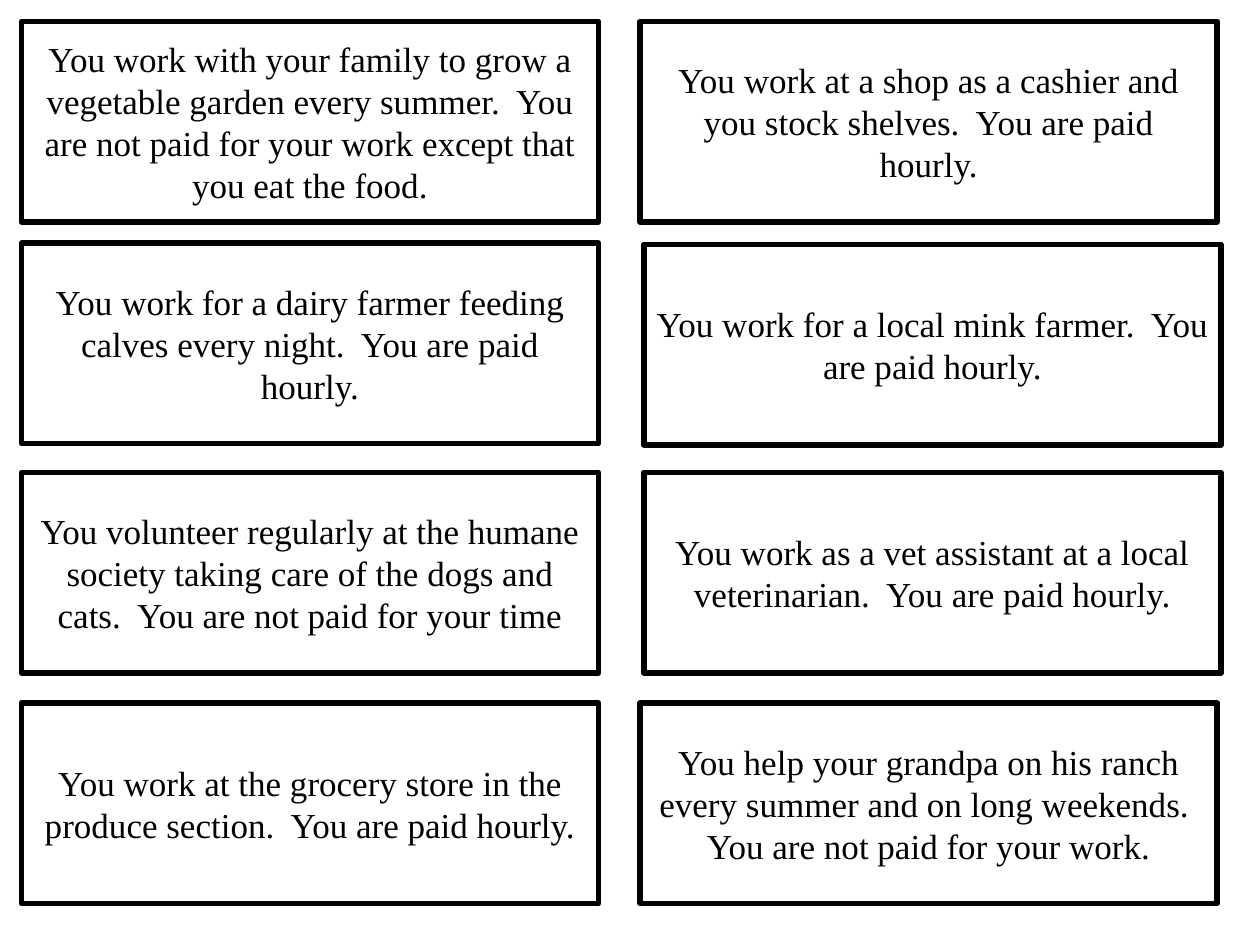
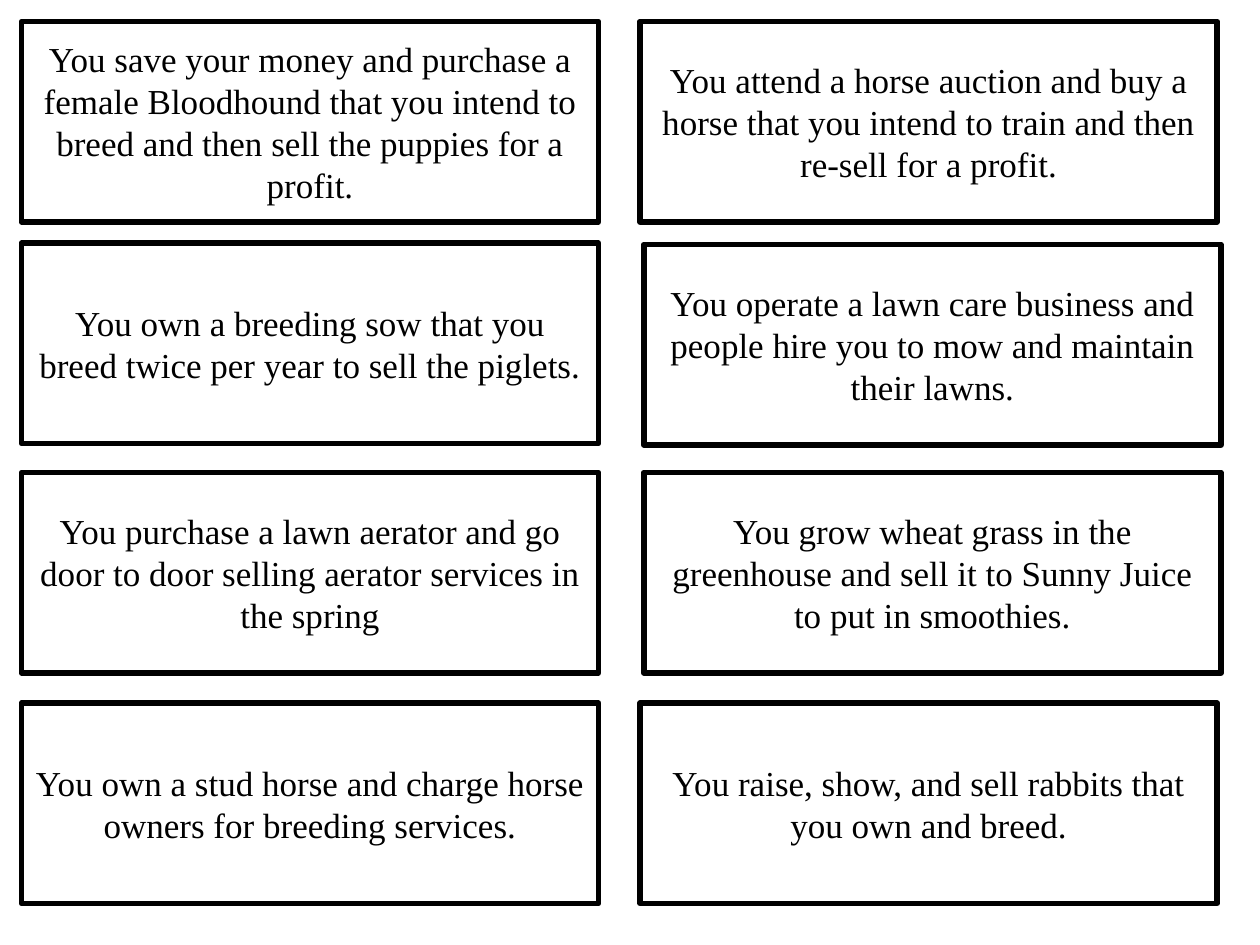
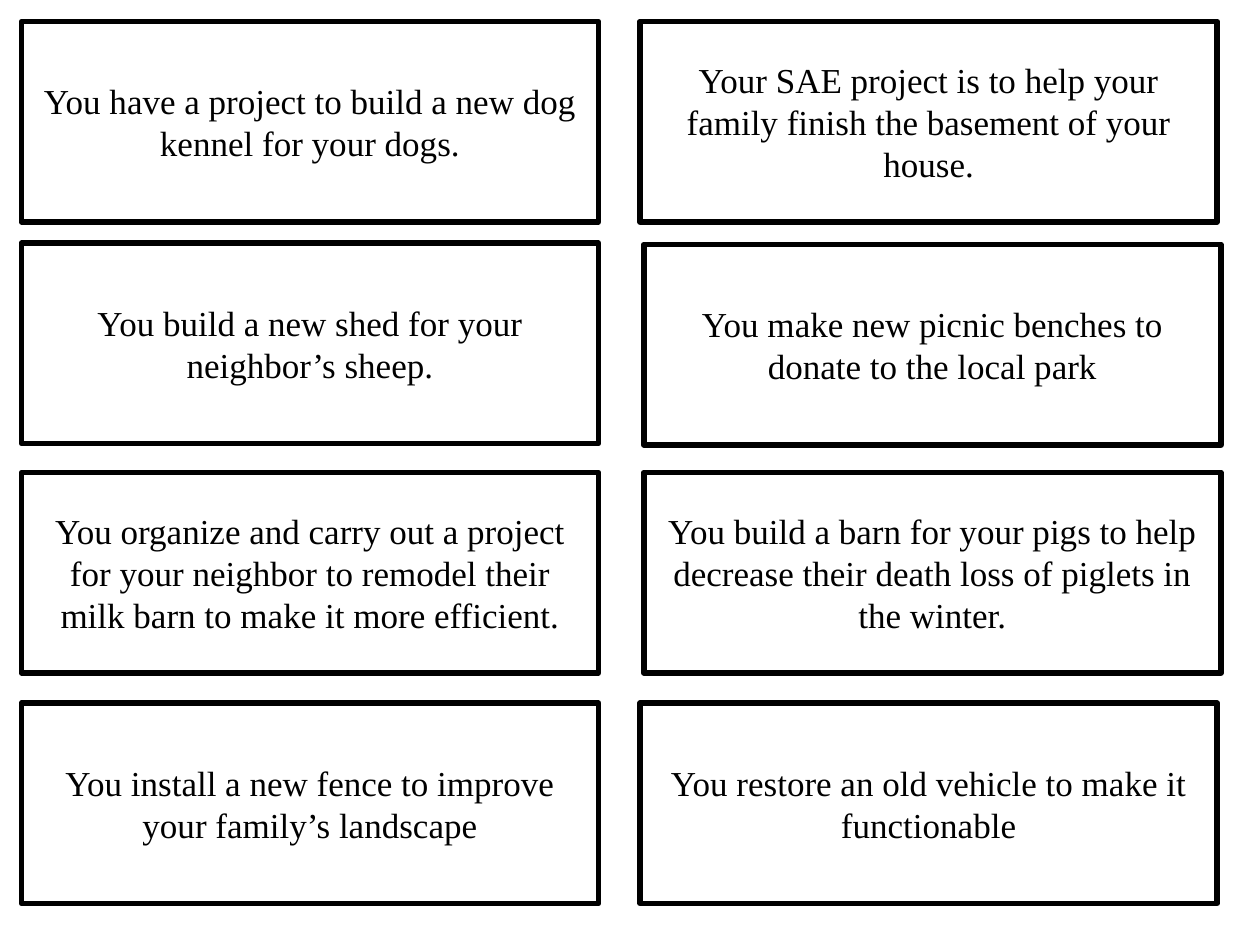
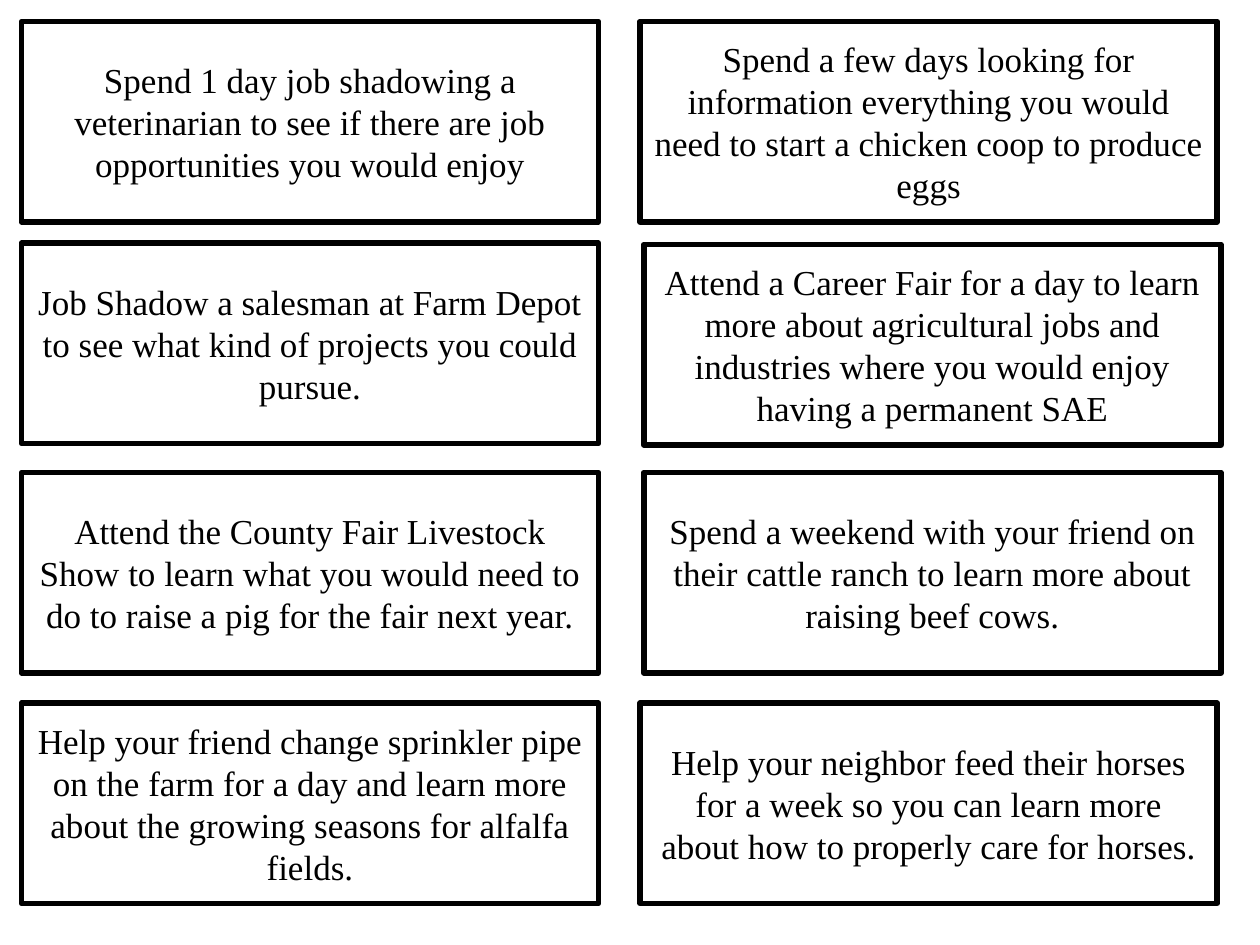
from pptx import Presentation
from pptx.dml.color import RGBColor
from pptx.enum import shapes, text
from pptx.util import Inches, Pt

BLACK = RGBColor(0x00, 0x00, 0x00)
CARD_WIDTH, CARD_HEIGHT = Inches(4.58), Inches(1.59)
CARD_SPOTS = [
    (0.17, 0.17), (5.08, 0.17),
    (0.17, 1.93), (5.11, 1.94),
    (0.17, 3.75), (5.11, 3.75),
    (0.17, 5.58), (5.08, 5.58),
]
CARD_FRAME = {"word_wrap": True, "vertical_anchor": text.MSO_ANCHOR.MIDDLE}
CARD_FONT = {"name": "Times New Roman", "size": Pt(20)}

PLACEMENT = [
    "You work with your family to grow a vegetable garden every summer.  You are not paid for your work except that you eat the food.",
    "You work at a shop as a cashier and you stock shelves.  You are paid hourly.",
    "You work for a dairy farmer feeding calves every night.  You are paid hourly.",
    "You work for a local mink farmer.  You are paid hourly.",
    "You volunteer regularly at the humane society taking care of the dogs and cats.  You are not paid for your time",
    "You work as a vet assistant at a local veterinarian.  You are paid hourly.",
    "You work at the grocery store in the produce section.  You are paid hourly.",
    "You help your grandpa on his ranch every summer and on long weekends.  You are not paid for your work.",
]
ENTREPRENEURSHIP = [
    "You save your money and purchase a female Bloodhound that you intend to breed and then sell the puppies for a profit.",
    "You attend a horse auction and buy a horse that you intend to train and then re-sell for a profit.",
    "You own a breeding sow that you breed twice per year to sell the piglets.",
    "You operate a lawn care business and people hire you to mow and maintain their lawns.",
    "You purchase a lawn aerator and go door to door selling aerator services in the spring",
    "You grow wheat grass in the greenhouse and sell it to Sunny Juice to put in smoothies.",
    "You own a stud horse and charge horse owners for breeding services.",
    "You raise, show, and sell rabbits that you own and breed.",
]
IMPROVEMENT = [
    "You have a project to build a new dog kennel for your dogs.",
    "Your SAE project is to help your family finish the basement of your house.",
    "You build a new shed for your neighbor’s sheep.",
    "You make new picnic benches to donate to the local park",
    "You organize and carry out a project for your neighbor to remodel their milk barn to make it more efficient.",
    "You build a barn for your pigs to help decrease their death loss of piglets in the winter.",
    "You install a new fence to improve your family’s landscape",
    "You restore an old vehicle to make it functionable",
]
EXPLORATORY = [
    "Spend 1 day job shadowing a veterinarian to see if there are job opportunities you would enjoy",
    "Spend a few days looking for information everything you would need to start a chicken coop to produce eggs",
    "Job Shadow a salesman at Farm Depot to see what kind of projects you could pursue.",
    "Attend a Career Fair for a day to learn more about agricultural jobs and industries where you would enjoy having a permanent SAE",
    "Attend the County Fair Livestock Show to learn what you would need to do to raise a pig for the fair next year.",
    "Spend a weekend with your friend on their cattle ranch to learn more about raising beef cows.",
    "Help your friend change sprinkler pipe on the farm for a day and learn more about the growing seasons for alfalfa fields.",
    "Help your neighbor feed their horses for a week so you can learn more about how to properly care for horses.",
]


def apply_format(target, values):
    for name, value in values.items():
        setattr(target, name, value)


def add_card(slide, spot, scenario):
    left, top = map(Inches, spot)
    card = slide.shapes.add_shape(
        shapes.MSO_SHAPE.RECTANGLE, left, top, CARD_WIDTH, CARD_HEIGHT)
    card.shadow.inherit = False
    card.fill.background()
    card.line.color.rgb = BLACK
    card.line.width = Pt(3.25)
    apply_format(card.text_frame, CARD_FRAME)
    paragraph = card.text_frame.paragraphs[0]
    paragraph.alignment = text.PP_ALIGN.CENTER
    wording = paragraph.add_run()
    wording.text = scenario
    apply_format(wording.font, CARD_FONT)
    wording.font.color.rgb = BLACK


def add_card_sheet(deck, scenarios):
    slide = deck.slides.add_slide(deck.slide_layouts[6])
    for spot, scenario in zip(CARD_SPOTS, scenarios):
        add_card(slide, spot, scenario)


def main():
    deck = Presentation()
    apply_format(deck, {"slide_width": Inches(10), "slide_height": Inches(7.5)})
    for scenarios in (PLACEMENT, ENTREPRENEURSHIP, IMPROVEMENT, EXPLORATORY):
        add_card_sheet(deck, scenarios)
    deck.save("out.pptx")


if __name__ == "__main__":
    main()
